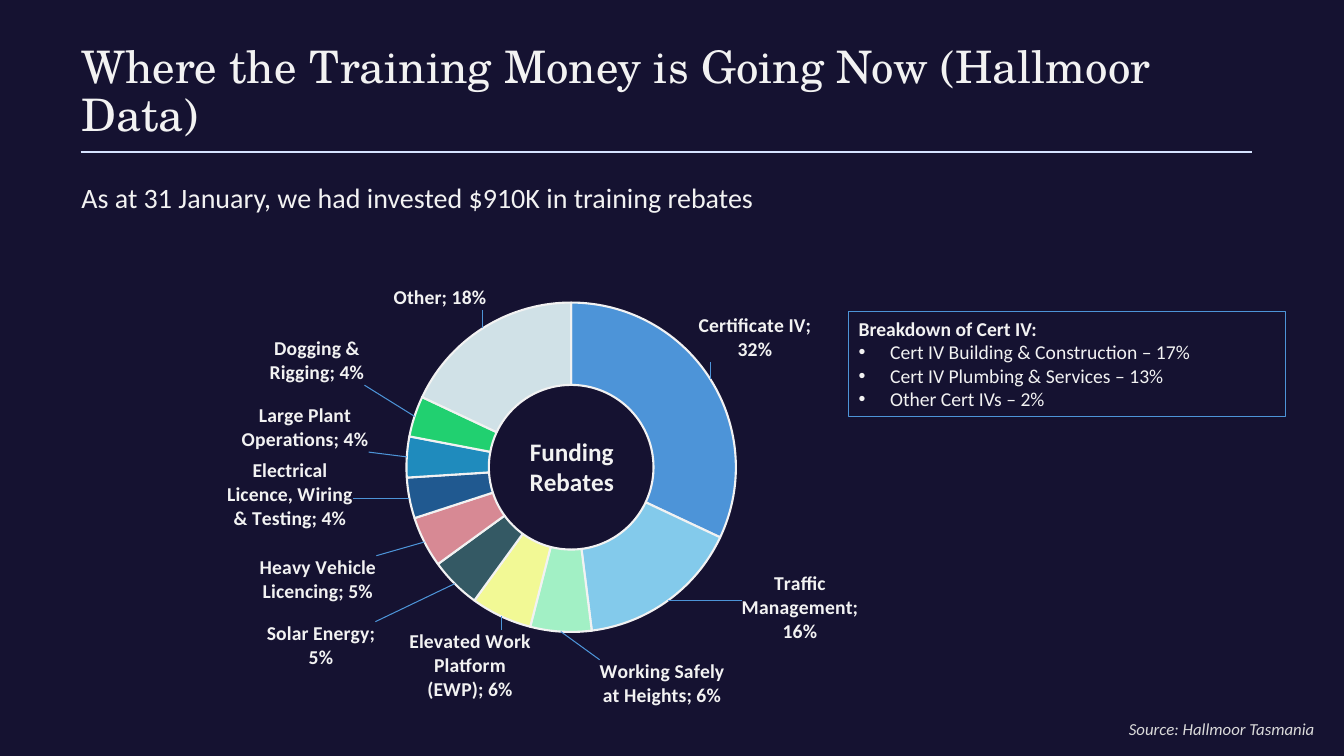
from copy import deepcopy
from dataclasses import dataclass
from math import cos, pi, sin

from pptx import Presentation
from pptx.chart.data import CategoryChartData
from pptx.dml.color import RGBColor
from pptx.enum.chart import XL_CHART_TYPE
from pptx.enum.shapes import MSO_CONNECTOR, MSO_SHAPE
from pptx.enum.text import MSO_ANCHOR, PP_ALIGN
from pptx.oxml import parse_xml
from pptx.oxml.ns import nsdecls, qn
from pptx.util import Pt


@dataclass(frozen=True)
class Theme:
    background: str = "151231"
    text: str = "F2F2F2"
    muted: str = "DADADA"
    rule: str = "D6E3FF"
    accent: str = "4D94D8"
    chart_text: str = "002060"
    title_font: str = "TeX Gyre Schola"
    body_font: str = "Calibri"
    title_size: int = 32
    subtitle_size: int = 20
    chart_title_size: int = 18
    label_size: int = 14
    source_size: int = 12
    chart_size: int = 10


@dataclass(frozen=True)
class Box:
    left: float
    top: float
    width: float
    height: float

    def emu(self) -> tuple:
        return Pt(self.left), Pt(self.top), Pt(self.width), Pt(self.height)


@dataclass(frozen=True)
class Slice:
    name: str
    share: float
    color: str
    label_x: float  # centre of the label on the slide
    label_y: float


THEME = Theme()
CHART = Box(149.8, 180, 471.6, 329.8)
PLOT = Box(290.3, 194.2, 235.3, 279.3)
TITLE_LAYOUT = (0.48, 0.39)
RING_MIDDLE = 0.75  # share of the outer radius where labels start

SLICES = [
    Slice("Certificate IV", 0.32, "4D94D8", 539.3, 241.4),
    Slice("Traffic Management", 0.16, "83CAEB", 571.4, 434.3),
    Slice("Working Safely at Heights", 0.06, "A2F0C5", 472.9, 488.6),
    Slice("Elevated Work Platform (EWP)", 0.06, "F2F995", 335.7, 475.7),
    Slice("Solar Energy", 0.05, "345964", 229.3, 461.4),
    Slice("Heavy Vehicle Licencing", 0.05, "D78994", 227.1, 414.3),
    Slice("Electrical Licence, Wiring & Testing", 0.04, "205990", 207.1, 353.6),
    Slice("Large Plant Operations", 0.04, "1F8BBD", 217.9, 305.7),
    Slice("Dogging & Rigging", 0.04, "21D070", 226.4, 257.9),
    Slice("Other", 0.18, "D0E1E7", 314.3, 212.9),
]
BREAKDOWN = [
    "Cert IV Building & Construction – 17%",
    "Cert IV Plumbing & Services – 13%",
    "Other Cert IVs – 2%",
]


def rgb(value: str) -> RGBColor:
    return RGBColor.from_string(value)


def style_font(font, size: float, color: str = THEME.text, name: str = THEME.body_font,
               bold: bool = False, italic: bool = False) -> None:
    font.size, font.name, font.bold, font.italic = Pt(size), name, bold, italic
    font.color.rgb = rgb(color)


def add_text(slide, text: str, box: Box, size: float, *, align=PP_ALIGN.LEFT,
             anchor=MSO_ANCHOR.TOP, spacing: float = 1.0, **font) -> None:
    tf = slide.shapes.add_textbox(*box.emu()).text_frame
    tf.word_wrap, tf.vertical_anchor = True, anchor
    p = tf.paragraphs[0]
    p.alignment, p.line_spacing = align, spacing
    r = p.add_run()
    r.text = text
    style_font(r.font, size, **font)


def add_rule(slide, x1: float, x2: float, y: float) -> None:
    line = slide.shapes.add_connector(MSO_CONNECTOR.STRAIGHT, Pt(x1), Pt(y), Pt(x2), Pt(y))
    line.line.color.rgb, line.line.width = rgb(THEME.rule), Pt(1.5)
    line._element.spPr.append(parse_xml(f"<a:effectLst {nsdecls('a')}/>"))


def add_breakdown(slide, heading: str, items: list[str], box: Box) -> None:
    sp = slide.shapes.add_shape(MSO_SHAPE.RECTANGLE, *box.emu())
    sp.shadow.inherit = False
    sp.fill.background()
    sp.line.color.rgb, sp.line.width = rgb(THEME.accent), Pt(0.75)
    tf = sp.text_frame
    tf.word_wrap, tf.vertical_anchor = True, MSO_ANCHOR.TOP
    for i, text in enumerate([heading, *items]):
        p = tf.add_paragraph() if i else tf.paragraphs[0]
        p.alignment = PP_ALIGN.LEFT
        if i:
            pPr = p._p.get_or_add_pPr()
            pPr.set("marL", str(Pt(22.5)))
            pPr.set("indent", str(-Pt(22.5)))
            pPr.append(parse_xml(f'<a:buFont {nsdecls("a")} typeface="Arial"/>'))
            pPr.append(parse_xml(f'<a:buChar {nsdecls("a")} char="•"/>'))
        r = p.add_run()
        r.text = text
        style_font(r.font, THEME.label_size, bold=i == 0)


def manual_layout(**values) -> object:
    fields = "".join(f'<c:{key} val="{value}"/>' for key, value in values.items())
    return parse_xml(f'<c:layout {nsdecls("c")}><c:manualLayout>{fields}'
                     "</c:manualLayout></c:layout>")


def set_layout(parent, layout, index: int) -> None:
    old = parent.find(qn("c:layout"))
    if old is not None:
        parent.remove(old)
    parent.insert(index, layout)


def place_labels(series) -> None:
    """Move each label from the middle of its ring segment to its own place."""
    labels = series.data_labels
    style_font(labels.font, THEME.label_size, bold=True)
    labels.number_format, labels.number_format_is_linked = "0%", False
    labels.show_value = labels.show_category_name = True
    labels.show_percentage = labels.show_legend_key = labels.show_series_name = False
    dLbls = labels._element
    dLbls.find(qn("c:txPr")).find(qn("a:bodyPr")).set("wrap", "square")
    for old in dLbls.findall(qn("c:showLeaderLines")):
        dLbls.remove(old)
    dLbls.append(parse_xml(f'<c:separator {nsdecls("c")}>; </c:separator>'))
    shared = list(dLbls)

    cx, cy = PLOT.left + PLOT.width / 2, PLOT.top + PLOT.height / 2
    radius = min(PLOT.width, PLOT.height) / 2 * RING_MIDDLE
    start = 0.0
    for i, s in enumerate(SLICES):
        angle = 2 * pi * (start + s.share / 2)
        start += s.share
        dx = (s.label_x - cx - radius * sin(angle)) / CHART.width
        dy = (s.label_y - cy + radius * cos(angle)) / CHART.height
        dLbl = parse_xml(f'<c:dLbl {nsdecls("c")}><c:idx val="{i}"/></c:dLbl>')
        dLbl.append(manual_layout(x=round(dx, 4), y=round(dy, 4)))
        dLbl.extend(deepcopy(shared))
        dLbls.insert(i, dLbl)
    dLbls.append(parse_xml(f'<c:showLeaderLines {nsdecls("c")} val="1"/>'))
    dLbls.append(parse_xml(
        f'<c:leaderLines {nsdecls("c", "a")}><c:spPr><a:ln w="{Pt(0.75)}"><a:solidFill>'
        f'<a:srgbClr val="{THEME.accent}"/></a:solidFill></a:ln></c:spPr></c:leaderLines>'))


def add_rebate_chart(slide) -> None:
    data = CategoryChartData(number_format="0%")
    data.categories = [s.name for s in SLICES]
    data.add_series("Series 1", [s.share for s in SLICES])
    chart = slide.shapes.add_chart(XL_CHART_TYPE.DOUGHNUT, *CHART.emu(), data).chart
    style_font(chart.font, THEME.chart_size, THEME.chart_text)
    chart.has_legend = False
    chart.has_title = True
    tf = chart.chart_title.text_frame
    tf.text = "Funding\nRebates"
    for p in tf.paragraphs:
        for r in p.runs:
            style_font(r.font, THEME.chart_title_size, bold=True)
    title = chart.chart_title._element
    x, y = TITLE_LAYOUT
    set_layout(title, manual_layout(xMode="edge", yMode="edge", x=x, y=y), 1)
    title.find(qn("c:overlay")).set("val", "1")

    plot = chart.plots[0]
    plot.vary_by_categories = True
    plot._element.find(qn("c:holeSize")).set("val", "47")
    set_layout(plot._element.getparent(), manual_layout(
        layoutTarget="inner", xMode="edge", yMode="edge",
        x=round((PLOT.left - CHART.left) / CHART.width, 3),
        y=round((PLOT.top - CHART.top) / CHART.height, 3),
        w=round(PLOT.width / CHART.width, 3),
        h=round(PLOT.height / CHART.height, 3)), 0)
    series = plot.series[0]
    for i, s in enumerate(SLICES):
        fmt = series.points[i].format
        fmt.fill.solid()
        fmt.fill.fore_color.rgb = rgb(s.color)
        fmt.line.color.rgb, fmt.line.width = rgb(THEME.text), Pt(1.5)
    place_labels(series)


def main() -> None:
    prs = Presentation()
    prs.slide_width, prs.slide_height = Pt(960), Pt(540)
    slide = prs.slides.add_slide(prs.slide_layouts[6])
    slide.background.fill.solid()
    slide.background.fill.fore_color.rgb = rgb(THEME.background)

    add_rule(slide, 57.6, 894.2, 108.7)
    add_text(slide, "Where the Training Money is Going Now (Hallmoor Data)",
             Box(51, 25.2, 843, 82), THEME.title_size, name=THEME.title_font,
             anchor=MSO_ANCHOR.MIDDLE, spacing=0.9)
    add_text(slide, "As at 31 January, we had invested $910K in training rebates",
             Box(51, 125.3, 843, 35.3), THEME.subtitle_size)
    add_text(slide, "Source: Hallmoor Tasmania", Box(545.8, 509.8, 400.3, 25.2),
             THEME.source_size, align=PP_ALIGN.RIGHT, color=THEME.muted, italic=True)
    add_rebate_chart(slide)
    add_breakdown(slide, "Breakdown of Cert IV:", BREAKDOWN, Box(606.2, 222.5, 311.8, 74.9))
    prs.save("out.pptx")


if __name__ == "__main__":
    main()
